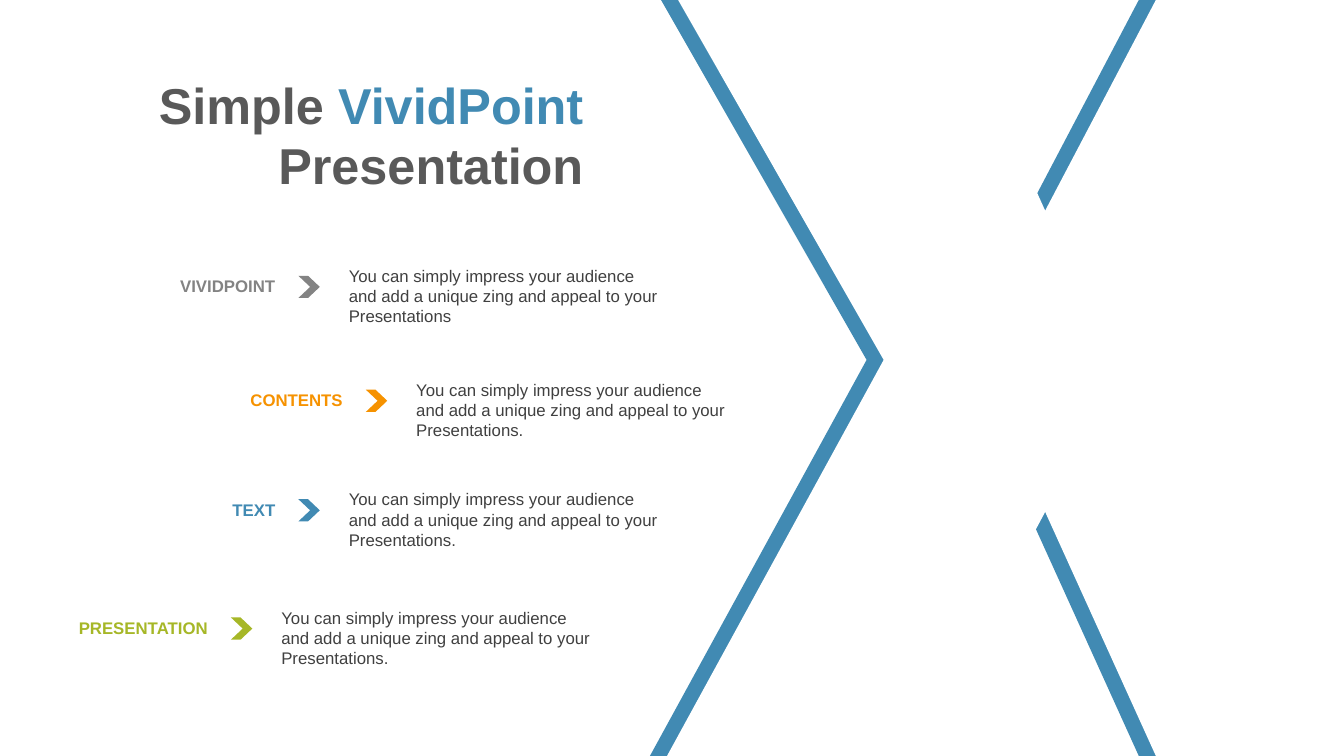
from pptx import Presentation
from pptx.dml.color import RGBColor
from pptx.enum.shapes import MSO_SHAPE
from pptx.enum.text import MSO_ANCHOR, MSO_AUTO_SIZE, PP_ALIGN
from pptx.util import Cm, Pt

BLUE = RGBColor(0x41, 0x8A, 0xB3)
GRAY = RGBColor(0x83, 0x83, 0x83)
ORANGE = RGBColor(0xF6, 0x92, 0x00)
GREEN = RGBColor(0xA6, 0xB7, 0x27)
WHITE = RGBColor(0xFF, 0xFF, 0xFF)
TITLE_GRAY = RGBColor(0x59, 0x59, 0x59)
TEXT_GRAY = RGBColor(0x40, 0x40, 0x40)

TITLE = [("Simple ", TITLE_GRAY), ("VividPoint ", BLUE), ("Presentation", TITLE_GRAY)]
BODY = "You can simply impress your audience and add a unique zing and appeal to your Presentations"
ITEMS = [
    ("VIVIDPOINT", BODY, GRAY, 1, 6.83),
    ("CONTENTS", BODY + ".", ORANGE, 2, 9.7),
    ("TEXT", BODY + ".", BLUE, 1, 12.46),
    ("PRESENTATION", BODY + ".", GREEN, 0, 15.44),
]
LEFT, INDENT = 1.27, 1.7
PANEL = [
    (16.66, 0), (23.52, 0), (25.91, 5.31), (28.7, 0), (32.99, 0),
    (32.99, 3.66), (29.92, 9.07), (32.99, 14.63), (32.99, 19.05), (28.7, 19.05),
    (25.91, 12.9), (22.63, 19.05), (16.38, 19.05), (21.84, 9.07),
]
PANEL_LAYERS = [(0, BLUE), (0.43, WHITE)]


def write(sp, runs, size=12, bold=False, align=PP_ALIGN.LEFT):
    tf = sp.text_frame
    tf.word_wrap = True
    tf.auto_size = MSO_AUTO_SIZE.NONE
    tf.vertical_anchor = MSO_ANCHOR.TOP
    p = tf.paragraphs[0]
    p.alignment = align
    for text, color in runs:
        r = p.add_run()
        r.text = text
        r.font.name = "Arial"
        r.font.size = Pt(size)
        r.font.bold = bold
        r.font.color.rgb = color


def paint(sp, color):
    sp.shadow.inherit = False
    sp.fill.solid()
    sp.fill.fore_color.rgb = color
    sp.line.fill.background()


prs = Presentation()
prs.slide_width, prs.slide_height = Cm(33.87), Cm(19.05)
s = prs.slides.add_slide(prs.slide_layouts[5])

for shift, color in PANEL_LAYERS:
    points = [(Cm(x + shift), Cm(y)) for x, y in PANEL]
    fb = s.shapes.build_freeform(*points[0])
    fb.add_line_segments(points[1:], close=True)
    paint(fb.convert_to_shape(), color)

title = s.shapes.title
title.left, title.top, title.width, title.height = Cm(1.5), Cm(1.73), Cm(13.46), Cm(3.33)
write(title, TITLE, size=36, bold=True, align=PP_ALIGN.RIGHT)

for label, body, color, step, y in ITEMS:
    x = LEFT + step * INDENT
    sp = s.shapes.add_textbox(Cm(x), Cm(y), Cm(4.22), Cm(0.78))
    write(sp, [(label, color)], bold=True, align=PP_ALIGN.RIGHT)
    sp = s.shapes.add_textbox(Cm(x + 5.57), Cm(y - 0.26), Cm(8.36), Cm(1.8))
    write(sp, [(body, TEXT_GRAY)])
    sp = s.shapes.add_shape(MSO_SHAPE.CHEVRON, Cm(x + 4.55), Cm(y + 0.12), Cm(0.54), Cm(0.56))
    sp.adjustments[0] = 0.55
    paint(sp, color)

prs.save("out.pptx")
